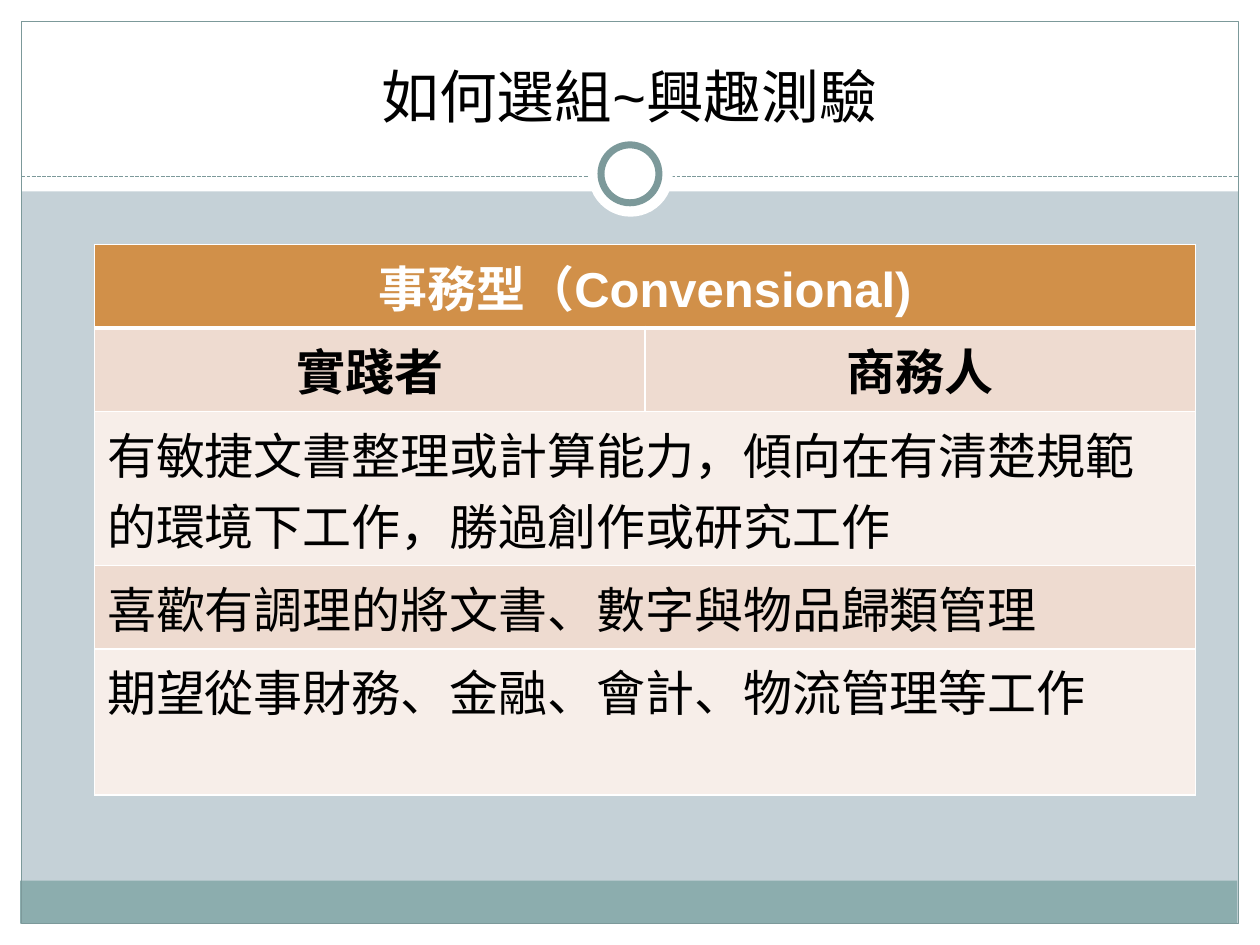
from dataclasses import dataclass

from lxml import etree
from pptx import Presentation
from pptx.dml.color import RGBColor
from pptx.enum.dml import MSO_LINE
from pptx.enum.shapes import MSO_CONNECTOR, MSO_SHAPE
from pptx.enum.text import MSO_ANCHOR, PP_ALIGN
from pptx.oxml.ns import qn
from pptx.util import Inches, Pt

RECT, OVAL = MSO_SHAPE.RECTANGLE, MSO_SHAPE.OVAL
STRAIGHT, DASH = MSO_CONNECTOR.STRAIGHT, MSO_LINE.SQUARE_DOT
LEFT, CENTER, BOTTOM = PP_ALIGN.LEFT, PP_ALIGN.CENTER, MSO_ANCHOR.BOTTOM


@dataclass(frozen=True)
class Theme:
    """Colours, font and type sizes of the slide."""
    back: str = "C5D1D7"
    white: str = "FFFFFF"
    black: str = "000000"
    band: str = "8CADAE"
    edge: str = "7C999A"
    head: str = "D19049"
    dark: str = "EEDBD0"
    light: str = "F7EEE9"
    font: str = "Arial"
    title: int = 33
    body: int = 28


class Deck:
    """Draws styled elements on the current slide."""

    def __init__(self, theme):
        """Open a blank title slide with a plain background."""
        self.theme = theme
        self.file = Presentation()
        self.file.slide_width, self.file.slide_height = Inches(10), Inches(7.5)
        self.slide = self.file.slides.add_slide(self.file.slide_layouts[5])
        self.paint(self.slide.background.fill, theme.back)

    def paint(self, fill, color):
        """Give a fill one solid colour."""
        fill.solid()
        fill.fore_color.rgb = RGBColor.from_string(color)

    def stroke(self, line, width):
        """Set a line to the edge colour."""
        self.paint(line.fill, self.theme.edge)
        line.width = Pt(width)

    def format(self, para, size, color, bold=False, align=LEFT):
        """Set the look of one paragraph."""
        para.alignment = align
        values = {"name": self.theme.font, "size": Pt(size), "bold": bold}
        for key, value in values.items():
            setattr(para.font, key, value)
        para.font.color.rgb = RGBColor.from_string(color)

    def shape(self, kind, box, fill=None, width=None):
        """Add a preset shape."""
        shape = self.slide.shapes.add_shape(kind, *map(Inches, box))
        shape.shadow.inherit = False
        if fill:
            self.paint(shape.fill, fill)
        else:
            shape.fill.background()
        if width:
            self.stroke(shape.line, width)
        else:
            shape.line.fill.background()

    def rule(self, left, right, top):
        """Add a dashed level line."""
        ends = map(Inches, (left, top, right, top))
        line = self.slide.shapes.add_connector(STRAIGHT, *ends)
        self.stroke(line.line, 0.75)
        line.line.dash_style = DASH
        etree.SubElement(line._element.spPr, qn("a:effectLst"))

    def title(self, text, box):
        """Fill the title placeholder and bring it to the front."""
        title = self.slide.shapes.title
        for key, value in zip(("left", "top", "width", "height"), box):
            setattr(title, key, Inches(value))
        frame = title.text_frame
        frame.text = text
        frame.vertical_anchor = BOTTOM
        self.format(frame.paragraphs[0], self.theme.title, self.theme.black, align=CENTER)
        self.slide.shapes._spTree.append(title._element)

    def border(self, cell, widths):
        """Draw white borders on the four sides of a cell."""
        props = cell._tc.get_or_add_tcPr()
        for side, width in widths.items():
            line = etree.SubElement(props, qn(f"a:ln{side}"), w=str(Pt(width)))
            fill = etree.SubElement(line, qn("a:solidFill"))
            etree.SubElement(fill, qn("a:srgbClr"), val=self.theme.white)

    def table(self, box, rows):
        """Add a two-column table; a row with one text spans both columns."""
        frame = self.slide.shapes.add_table(len(rows), 2, *map(Inches, box))
        grid = frame.table
        for i, (height, texts, fill, style) in enumerate(rows):
            grid.rows[i].height = Inches(height)
            for j in range(2):
                cell = grid.cell(i, j)
                thick = {"T": 3 if i == 1 else 1, "B": 3 if i == 0 else 1}
                self.border(cell, {"L": 1, "R": 1, **thick})
                self.paint(cell.fill, fill)
            if len(texts) == 1:
                grid.cell(i, 0).merge(grid.cell(i, 1))
            for j, text in enumerate(texts):
                cell = grid.cell(i, j)
                cell.text = text
                self.format(cell.text_frame.paragraphs[0], self.theme.body, **style)


def main():
    """Build and save the slide."""
    theme = Theme()
    deck = Deck(theme)
    for box in ((0, 7.33, 10, 0.17), (0, 0, 10, 1.52),
                (0, 0, 0.17, 7.5), (9.83, 0, 0.17, 7.5)):
        deck.shape(RECT, box, theme.white)
    deck.shape(RECT, (0.16, 6.99, 9.66, 0.34), theme.band)
    deck.shape(RECT, (0.17, 0.17, 9.66, 7.16), width=0.75)
    deck.rule(0.17, 9.83, 1.4)
    deck.shape(OVAL, (4.67, 1.05, 0.67, 0.67), theme.white)
    deck.shape(OVAL, (4.77, 1.15, 0.46, 0.46), theme.white, 4)
    deck.title("如何選組~興趣測驗", (0.33, 0.25, 9.33, 0.83))

    head = {"color": theme.white, "bold": True, "align": CENTER}
    role = {**head, "color": theme.black}
    plain = {"color": theme.black}
    deck.table((0.75, 1.94, 8.74, 4.25), [
        (0.64, ["事務型（Convensional)"], theme.head, head),
        (0.64, ["實踐者", "商務人"], theme.dark, role),
        (1.16, ["有敏捷文書整理或計算能力，傾向在有清楚規範的環境下工作，勝過創作或研究工作"],
         theme.light, plain),
        (0.64, ["喜歡有調理的將文書、數字與物品歸類管理"], theme.dark, plain),
        (1.16, ["期望從事財務、金融、會計、物流管理等工作"], theme.light, plain),
    ])
    deck.file.save("out.pptx")


if __name__ == "__main__":
    main()
